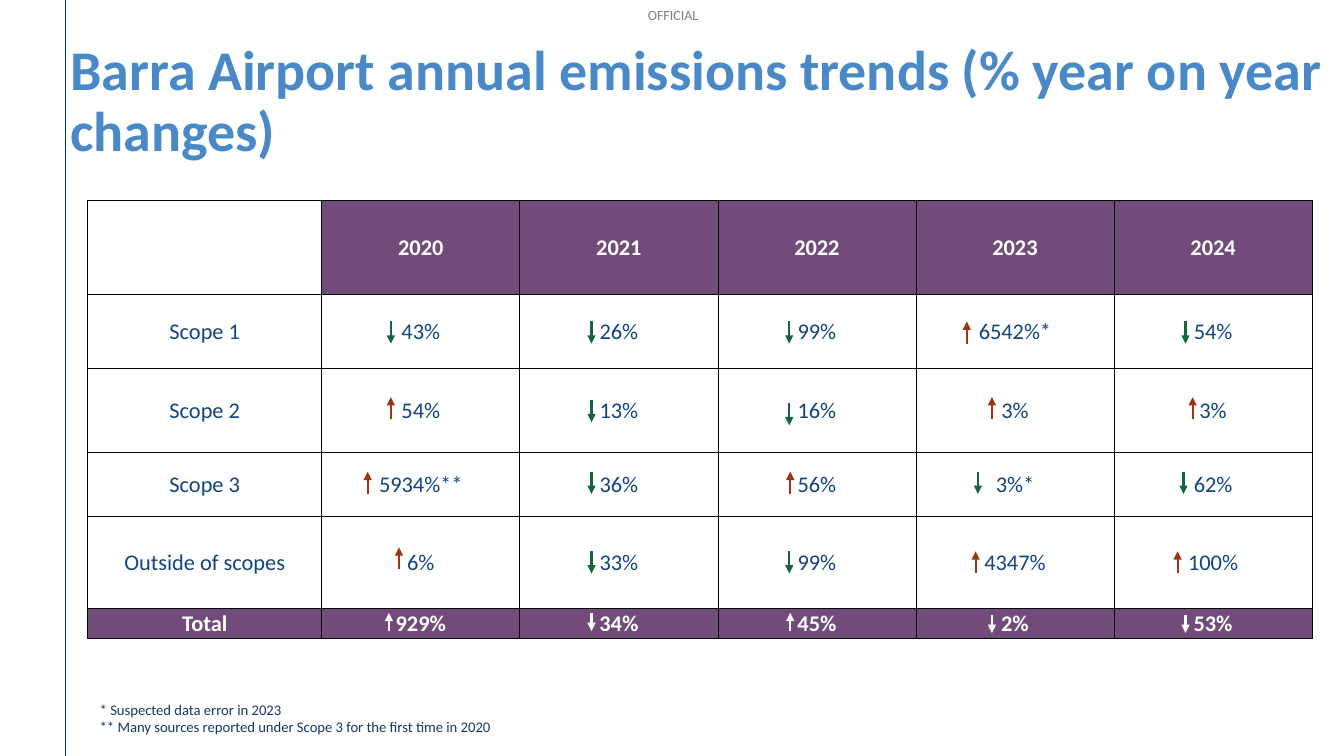
from lxml import etree
from pptx import Presentation
from pptx.dml.color import RGBColor
from pptx.enum.shapes import MSO_CONNECTOR
from pptx.enum.text import MSO_ANCHOR, PP_ALIGN
from pptx.oxml.ns import qn
from pptx.util import Inches, Pt

STRAIGHT = MSO_CONNECTOR.STRAIGHT
MIDDLE = MSO_ANCHOR.MIDDLE
CENTER, LEFT = PP_ALIGN.CENTER, PP_ALIGN.LEFT
UP, DOWN = "up", "down"

COLORS = {
    "rule": "023671", "black": "000000", "white": "FFFFFF", "title": "4989C8",
    "purple": "714B79", "body": "12447D", "note": "183860",
    UP: "9E3316", DOWN: "17643E",
}

YEARS = ["2020", "2021", "2022", "2023", "2024"]
TABLE_LEFT, TABLE_TOP = 6.53, 26.53
LABEL_WIDTH, YEAR_WIDTH = 17.41, 14.74
HEADER_HEIGHT = 12.43

# Each row: label, height, arrow top, arrow length, then a cell per year as
# value, direction, arrow place in percent of the cell and optional arrow drop.
ROWS = [
    ("Scope 1", 9.79, 42.53, 2.93, [
        ("43%", DOWN, 34.9), ("26%", DOWN, 36.2), ("99%", DOWN, 36),
        ("6542%*", UP, 25.6), ("54%", DOWN, 36)]),
    ("Scope 2", 11.11, 52.53, 2.93, [
        ("54%", UP, 34.9), ("13%", DOWN, 36.2, 0.4), ("16%", DOWN, 36, 0.8),
        ("3%", UP, 38.3), ("3%", UP, 39.6)]),
    ("Scope 3", 8.47, 62.4, 2.93, [
        ("5934%**", UP, 23.2), ("36%", DOWN, 36.2), ("56%", UP, 36.5),
        ("3%*", DOWN, 31.2), ("62%", DOWN, 35)]),
    ("Outside of scopes", 12.17, 72.93, 2.93, [
        ("6%", UP, 39, -0.53), ("33%", DOWN, 36.2), ("99%", DOWN, 36),
        ("4347%", UP, 30.1), ("100%", UP, 32)]),
    ("Total", 3.97, 81.07, 2.4, [
        ("929%", UP, 33.9), ("34%", DOWN, 36.2), ("45%", UP, 36.5),
        ("2%", DOWN, 38.3, 0.26), ("53%", DOWN, 36, 0.26)]),
]


class SlideBuilder:
    """Holds the style and the current page; lengths are percent of its size."""

    font = "Calibri"

    def __init__(self, deck):
        self.deck = deck
        self.page = deck.slides.add_slide(deck.slide_layouts[6])

    def x(self, share):
        return round(self.deck.slide_width * share / 100)

    def y(self, share):
        return round(self.deck.slide_height * share / 100)

    def color(self, name):
        return RGBColor.from_string(COLORS[name])

    def span(self, para, text, size, color, bold=False, alpha=None):
        span = para.add_run()
        span.text = text
        span.font.name = self.font
        span.font.size = Pt(size)
        span.font.bold = bold
        span.font.color.rgb = self.color(color)
        if alpha:
            tint = span.font.fill._xPr.find(".//" + qn("a:srgbClr"))
            etree.SubElement(tint, qn("a:alpha"), val=str(alpha * 1000))

    def text(self, place, lines, size, color, bold=False, alpha=None,
             align=LEFT, wrap=True, inset=True, spacing=None):
        left, top, width, height = place
        box = self.page.shapes.add_textbox(
            self.x(left), self.y(top), self.x(width), self.y(height))
        frame = box.text_frame
        frame.word_wrap = wrap
        if not inset:
            frame.margin_left = frame.margin_right = 0
            frame.margin_top = frame.margin_bottom = 0
        for index, line in enumerate(lines):
            para = frame.add_paragraph() if index else frame.paragraphs[0]
            para.alignment = align
            if spacing:
                para.line_spacing = spacing
            self.span(para, line, size, color, bold, alpha)

    def line(self, x, start, end, color, width, arrow=False):
        line = self.page.shapes.add_connector(
            STRAIGHT, self.x(x), self.y(start), self.x(x), self.y(end))
        line.line.color.rgb = self.color(color)
        line.line.width = Pt(width)
        if arrow:
            etree.SubElement(line.line._get_or_add_ln(), qn("a:tailEnd"), type="triangle")
        etree.SubElement(line._element.spPr, qn("a:effectLst"))

    def cell(self, cell, text, color, bold=False, fill=None):
        cell.margin_left = cell.margin_right = cell.margin_top = cell.margin_bottom = 0
        cell.vertical_anchor = MIDDLE
        properties = cell._tc.get_or_add_tcPr()
        for side in ("lnL", "lnR", "lnT", "lnB"):
            border = etree.SubElement(properties, qn("a:" + side), w=str(Pt(0.5)))
            paint = etree.SubElement(border, qn("a:solidFill"))
            etree.SubElement(paint, qn("a:srgbClr"), val=COLORS["black"])
        if fill:
            cell.fill.solid()
            cell.fill.fore_color.rgb = self.color(fill)
        else:
            cell.fill.background()
        if text:
            para = cell.text_frame.paragraphs[0]
            para.alignment = CENTER
            self.span(para, text, 16, color, bold)

    def table(self):
        widths = [LABEL_WIDTH] + [YEAR_WIDTH] * len(YEARS)
        heights = [HEADER_HEIGHT] + [row[1] for row in ROWS]
        table = self.page.shapes.add_table(
            len(heights), len(widths), self.x(TABLE_LEFT), self.y(TABLE_TOP),
            self.x(sum(widths)), self.y(sum(heights))).table
        table.first_row = table.horz_banding = False
        for column, width in zip(table.columns, widths):
            column.width = self.x(width)
        for row, height in zip(table.rows, heights):
            row.height = self.y(height)
        for index, year in enumerate([""] + YEARS):
            self.cell(table.cell(0, index), year, "white", True, "purple" if year else None)
        for number, (label, _, _, _, cells) in enumerate(ROWS, 1):
            total = label == "Total"
            style = ("white", True, "purple") if total else ("body",)
            for index, value in enumerate([label] + [entry[0] for entry in cells]):
                self.cell(table.cell(number, index), value, *style)

    def arrow(self, column, top, length, color, direction, share, drop=0):
        x = TABLE_LEFT + LABEL_WIDTH + YEAR_WIDTH * (column + share / 100)
        ends = [top + drop, top + drop + length]
        if direction == UP:
            ends.reverse()
        self.line(x, *ends, color or direction, 1.5, arrow=True)

    def arrows(self):
        for label, _, top, length, cells in ROWS:
            color = "white" if label == "Total" else None
            for column, (_, *trend) in enumerate(cells):
                self.arrow(column, top, length, color, *trend)


def main():
    deck = Presentation()
    deck.slide_width, deck.slide_height = Inches(13.33), Inches(7.5)
    slide = SlideBuilder(deck)
    slide.line(4.88, 0, 100, "rule", 1)
    slide.text((48.09, 0.93, 3.98, 2.27), ["OFFICIAL"], 10, "black",
               alpha=50, align=CENTER, wrap=False, inset=False)
    slide.text((5.25, 5.6, 94.75, 14.13),
               ["Barra Airport annual emissions trends (% year on year changes)"],
               40, "title", bold=True, inset=False, spacing=0.9)
    slide.table()
    slide.text((6.68, 92, 91.97, 6),
               ["* Suspected data error in 2023",
                "** Many sources reported under Scope 3 for the first time in 2020"],
               10.5, "note")
    slide.arrows()
    deck.save("out.pptx")


if __name__ == "__main__":
    main()
